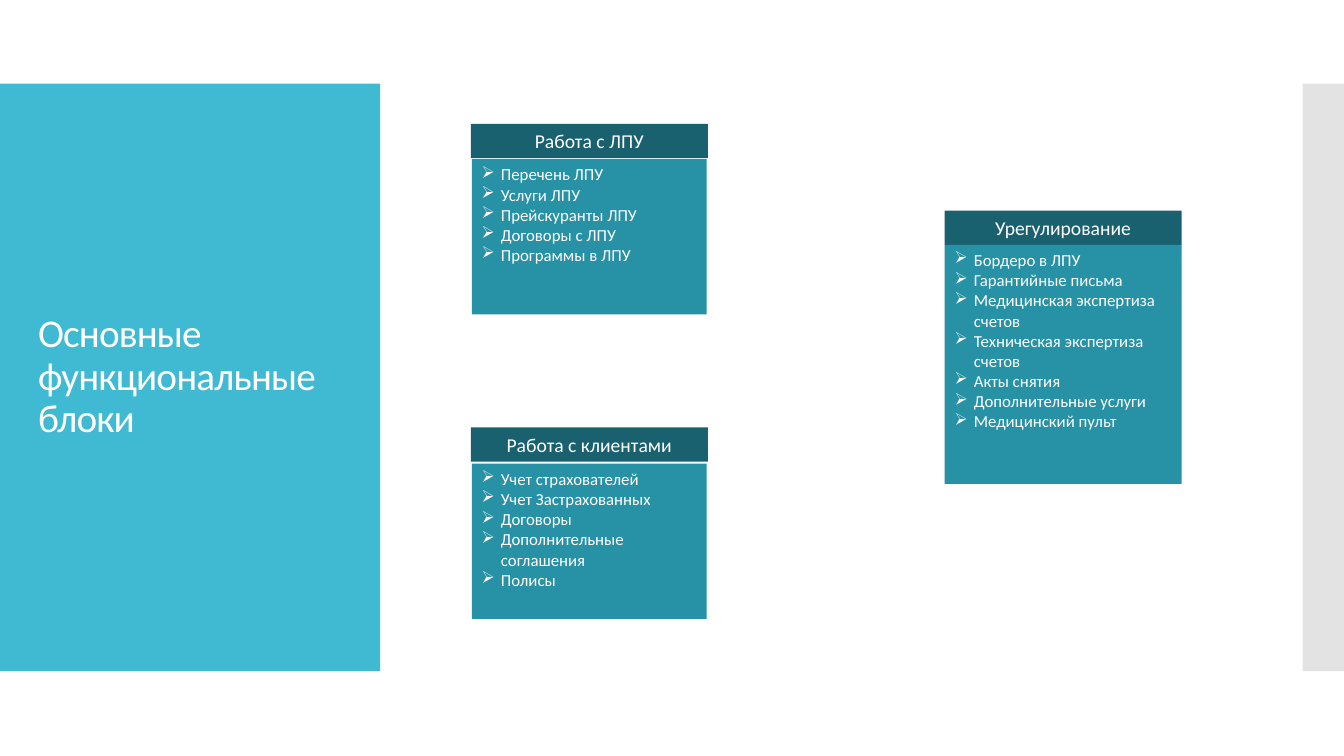
from lxml.etree import SubElement
from pptx import Presentation
from pptx.dml.color import RGBColor
from pptx.enum.shapes import MSO_SHAPE
from pptx.enum.text import MSO_ANCHOR, PP_ALIGN
from pptx.oxml.ns import qn
from pptx.util import Inches, Pt

FONT = "Calibri"
WHITE = "FFFFFF"
CYAN = "40BAD2"
GREY = "C8C8C8"
DARK_TEAL = "1A616F"
TEAL = "2791A6"

BAND_TOP, BAND_HEIGHT = 0.83, 5.83
BLOCK_WIDTH, HEADER_HEIGHT = 2.35, 0.34
BULLET_INDENT = 0.19

# left, top, inset of the list, gap under the header, list height, heading, items
BLOCKS = [
    (4.67, 1.23, 0.01, 0.01, 1.54, "Работа с ЛПУ", [
        "Перечень ЛПУ", "Услуги ЛПУ", "Прейскуранты ЛПУ",
        "Договоры с ЛПУ", "Программы в ЛПУ"]),
    (9.37, 2.09, 0, 0, 2.37, "Урегулирование", [
        "Бордеро в ЛПУ", "Гарантийные письма",
        "Медицинская экспертиза счетов", "Техническая экспертиза счетов",
        "Акты снятия", "Дополнительные услуги", "Медицинский пульт"]),
    (4.67, 4.24, 0.01, 0.02, 1.54, "Работа с клиентами", [
        "Учет страхователей", "Учет Застрахованных", "Договоры",
        "Дополнительные соглашения", "Полисы"]),
]


def rgb(value):
    return RGBColor.from_string(value)


def add_rect(slide, left, top, width, height, color):
    rect = slide.shapes.add_shape(
        MSO_SHAPE.RECTANGLE, Inches(left), Inches(top), Inches(width), Inches(height))
    rect.shadow.inherit = False
    rect.fill.solid()
    rect.fill.fore_color.rgb = rgb(color)
    rect.line.fill.background()
    return rect


def add_run(paragraph, text, size):
    run = paragraph.add_run()
    run.text = text
    run.font.name = FONT
    run.font.size = Pt(size)
    run.font.color.rgb = rgb(WHITE)
    return run


def set_bullet(paragraph):
    properties = paragraph._p.get_or_add_pPr()
    properties.set("marL", str(Inches(BULLET_INDENT)))
    properties.set("indent", str(-Inches(BULLET_INDENT)))
    SubElement(properties, qn("a:buChar")).set("char", "➢")


def add_side_bands(slide):
    add_rect(slide, 0, BAND_TOP, 3.77, BAND_HEIGHT, CYAN)
    edge = add_rect(slide, 12.92, BAND_TOP, 0.42, BAND_HEIGHT, GREY)
    edge_color = edge._element.spPr.find(qn("a:solidFill")).find(qn("a:srgbClr"))
    SubElement(edge_color, qn("a:alpha")).set("val", "50000")


def add_title(slide, left, top, width, height):
    title = slide.shapes.add_textbox(
        Inches(left), Inches(top), Inches(width), Inches(height)).text_frame
    title.word_wrap = True
    title.vertical_anchor = MSO_ANCHOR.MIDDLE
    paragraph = title.paragraphs[0]
    paragraph.line_spacing = 0.9
    for index, line in enumerate(["Основные функциональные", "блоки"]):
        if index:
            paragraph.add_line_break()
        run = add_run(paragraph, line, 28)
        run._r.get_or_add_rPr().set("spc", "-60")


def add_block(slide, left, top, inset, gap, list_height, heading, items):
    """Place a header bar with a bulleted panel under it."""
    header = add_rect(slide, left, top, BLOCK_WIDTH, HEADER_HEIGHT, DARK_TEAL).text_frame
    header.word_wrap = True
    header.vertical_anchor = MSO_ANCHOR.MIDDLE
    header.paragraphs[0].alignment = PP_ALIGN.CENTER
    add_run(header.paragraphs[0], heading, 14)

    panel = add_rect(slide, left + inset, top + HEADER_HEIGHT + gap,
                     BLOCK_WIDTH - 2 * inset, list_height, TEAL).text_frame
    panel.word_wrap = True
    panel.vertical_anchor = MSO_ANCHOR.TOP
    for index, item in enumerate(items):
        paragraph = panel.add_paragraph() if index else panel.paragraphs[0]
        paragraph.alignment = PP_ALIGN.LEFT
        set_bullet(paragraph)
        add_run(paragraph, item, 12)


def main():
    presentation = Presentation()
    presentation.slide_width = Inches(13.33)
    presentation.slide_height = Inches(7.5)
    slide = presentation.slides.add_slide(presentation.slide_layouts[6])
    add_side_bands(slide)
    for block in BLOCKS:
        add_block(slide, *block)
    add_title(slide, 0.28, 1.23, 3.22, 5.03)
    presentation.save("out.pptx")


if __name__ == "__main__":
    main()
